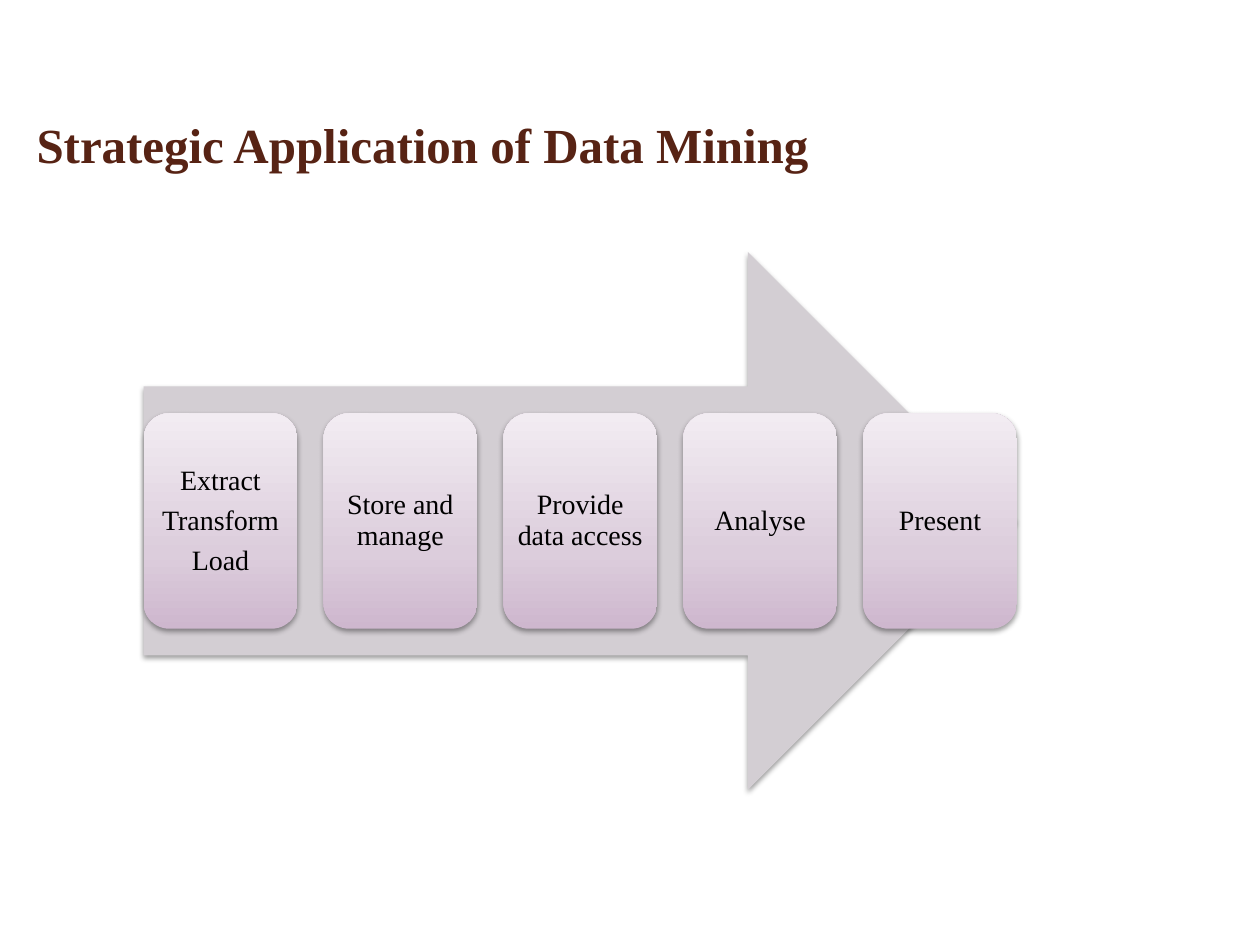
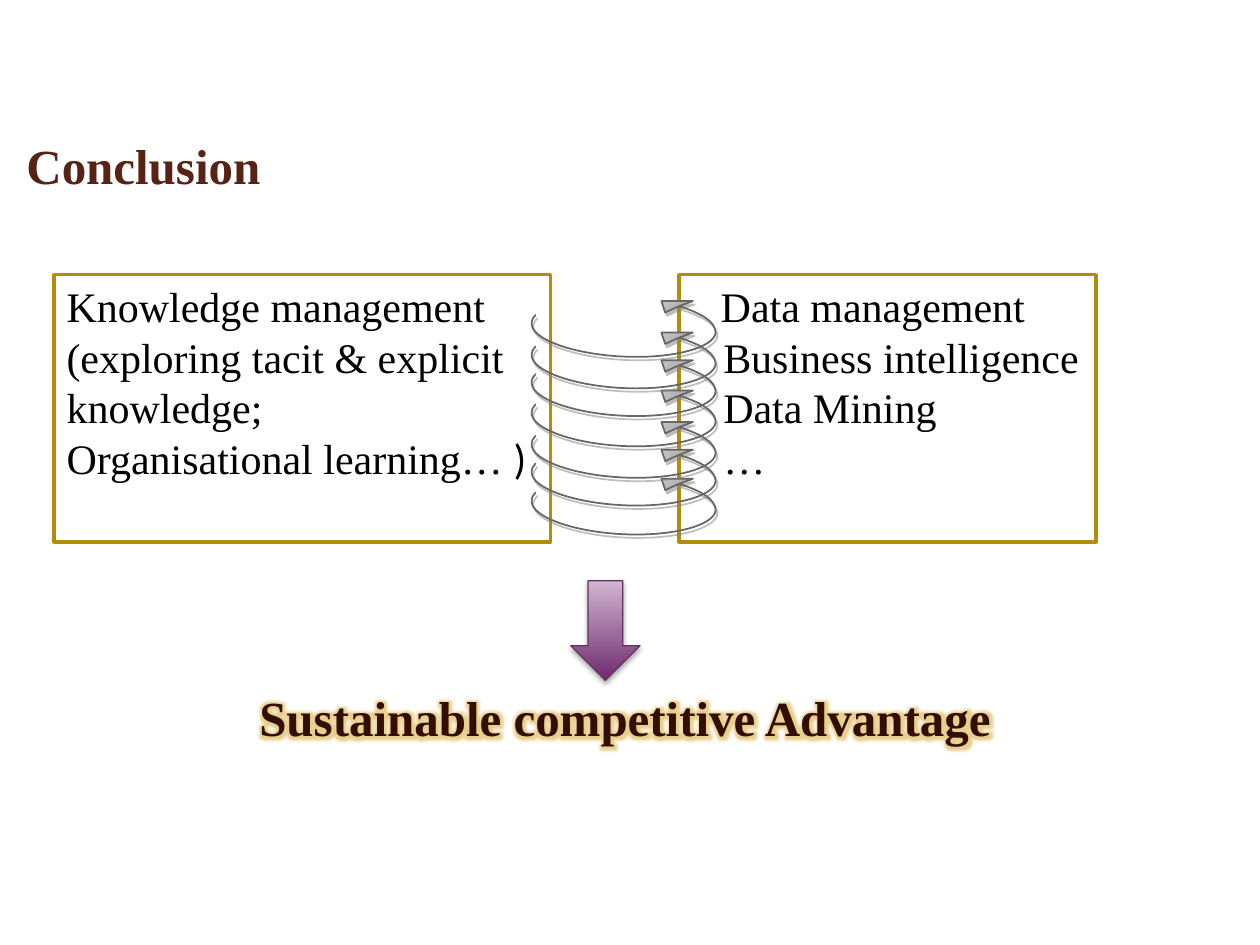
from lxml import etree
from pptx import Presentation
from pptx import util as u
from pptx.dml.color import RGBColor
from pptx.enum import shapes, text
from pptx.oxml import ns

PX = 9144  # 100 px to the inch
FONT = "Times New Roman"
COLORS = {
    "title": "572314", "advantage": "320E04", "glow": "D6A830", "text": "000000",
    "arrow": "D3CED3", "panel": "FFFFFF", "gold": "B58C0A", "plum": "653165",
    "coil": "666666", "shade": "000000", "coil_shade": "7F7F7F",
}
# Gradients: angle in degrees, then (position, colour) stops
STEP_FILL = (270, [(0, "CEB7CE"), (35, "DCCDDC"), (100, "F2ECF2")])
DOWN_FILL = (270, [(0, "6E2B6E"), (100, "D0B5D0")])
COIL_FILL = (45, [(0, "666666"), (50, "CCCCCC"), (100, "666666")])
# Shadows: colour, opacity in %, blur and distance in points, angle in degrees
STEP_SHADOW = ("shade", 38, 3.1, 1.6, 90)
DOWN_SHADOW = ("shade", 35, 3.1, 1.8, 90)
COIL_SHADOW = ("coil_shade", 50, 0, 2.2, 63)


def paint(shape, fill, line=None, width=1, shadow=None):
    """Fill with a colour name or a gradient, then set outline and shadow."""
    shape.shadow.inherit = False
    properties = shape._element.spPr
    if isinstance(fill, str):
        shape.fill.solid()
        shape.fill.fore_color.rgb = RGBColor.from_string(COLORS[fill])
    else:
        angle, stops = fill
        gradient = etree.Element(ns.qn("a:gradFill"), rotWithShape="1")
        stop_list = etree.SubElement(gradient, ns.qn("a:gsLst"))
        for position, color in stops:
            stop = etree.SubElement(stop_list, ns.qn("a:gs"), pos=str(position * 1000))
            etree.SubElement(stop, ns.qn("a:srgbClr"), val=color)
        etree.SubElement(gradient, ns.qn("a:lin"), ang=str(angle * 60000), scaled="0")
        properties.find(ns.qn("a:effectLst")).addprevious(gradient)
    if line:
        shape.line.color.rgb = RGBColor.from_string(COLORS[line])
        shape.line.width = u.Pt(width)
    else:
        shape.line.fill.background()
    if shadow:
        color, opacity, blur, distance, angle = shadow
        outer = etree.SubElement(
            properties.find(ns.qn("a:effectLst")), ns.qn("a:outerShdw"),
            blurRad=str(u.Pt(blur)), dist=str(u.Pt(distance)),
            dir=str(angle * 60000), rotWithShape="0")
        tint = etree.SubElement(outer, ns.qn("a:srgbClr"), val=COLORS[color])
        etree.SubElement(tint, ns.qn("a:alpha"), val=str(opacity * 1000))


def write(shape, lines, size, color="text", bold=False, align=text.PP_ALIGN.LEFT,
          anchor=text.MSO_ANCHOR.TOP, left=10, right=10):
    """Write one paragraph per line; left and right are the side margins in px."""
    frame = shape.text_frame
    frame.word_wrap = True
    frame.vertical_anchor = anchor
    frame.margin_left, frame.margin_right = left * PX, right * PX
    frame.text = "\n".join(lines)
    for para in frame.paragraphs:
        para.alignment = align
        for span in para.runs:
            span.font.name = FONT
            span.font.size = u.Pt(size)
            span.font.bold = bold
            span.font.color.rgb = RGBColor.from_string(COLORS[color])
    return frame


deck = Presentation()
deck.slide_width, deck.slide_height = 1000 * PX, 750 * PX

pages = []
for title, bounds in [("Strategic Application of Data Mining", (16, 75, 791, 79)),
                      ("Conclusion", (8, 68, 768, 126))]:
    page = deck.slides.add_slide(deck.slide_layouts[6])
    box = page.shapes.add_textbox(*[length * PX for length in bounds])
    write(box, [title], 28, "title", bold=True, anchor=text.MSO_ANCHOR.MIDDLE, left=13)
    pages.append(page)
process_page, conclusion_page = pages

# Process steps on a wide arrow
arrow = process_page.shapes.add_shape(
    shapes.MSO_SHAPE.RIGHT_ARROW, 114 * PX, 200 * PX, 693 * PX, 427 * PX)
paint(arrow, "arrow", shadow=STEP_SHADOW)

steps = [["Extract", "Transform", "Load"], ["Store and manage"],
         ["Provide data access"], ["Analyse"], ["Present"]]
step_width = 122
step_pitch = (693 - step_width) / (len(steps) - 1)
for index, lines in enumerate(steps):
    step = process_page.shapes.add_shape(
        shapes.MSO_SHAPE.ROUNDED_RECTANGLE, round((114 + index * step_pitch) * PX),
        328 * PX, step_width * PX, 171 * PX)
    paint(step, STEP_FILL, shadow=STEP_SHADOW)
    frame = write(step, lines, 16, align=text.PP_ALIGN.CENTER,
                  anchor=text.MSO_ANCHOR.MIDDLE, left=1, right=1)
    for para in frame.paragraphs:
        para.line_spacing = 0.9
        para.space_after = u.Pt(5.6)

# Conclusion: down arrow and its result
down_arrow = conclusion_page.shapes.add_shape(
    shapes.MSO_SHAPE.DOWN_ARROW, 453 * PX, 461 * PX, 55 * PX, 79 * PX)
paint(down_arrow, DOWN_FILL, "plum", 0.75, DOWN_SHADOW)

result = conclusion_page.shapes.add_textbox(98 * PX, 541 * PX, 796 * PX, 88 * PX)
frame = write(result, ["Sustainable competitive Advantage"], 28, "advantage",
              bold=True, align=text.PP_ALIGN.CENTER)
effects = etree.Element(ns.qn("a:effectLst"))
glow = etree.SubElement(effects, ns.qn("a:glow"), rad=str(u.Pt(8)))
tint = etree.SubElement(glow, ns.qn("a:srgbClr"), val=COLORS["glow"])
etree.SubElement(tint, ns.qn("a:alpha"), val="55000")
span = frame.paragraphs[0].runs[0]
span._r.rPr.find(ns.qn("a:solidFill")).addnext(effects)

# Two panels
panels = [
    (43, 394, 10, ["Knowledge management (exploring tacit & explicit knowledge;",
                   "Organisational learning… "]),
    (539, 331, 33, ["Data management", "Business intelligence", "Data Mining", "…"]),
]
frames = []
for left, width, margin, lines in panels:
    panel = conclusion_page.shapes.add_shape(
        shapes.MSO_SHAPE.RECTANGLE, left * PX, 218 * PX, width * PX, 212 * PX)
    paint(panel, "panel", "gold", 2)
    frames.append(write(panel, lines, 24, left=margin, right=5))
bracket = frames[0].paragraphs[-1].add_run()
bracket.text = ")"
bracket.font.name = "Calibri"
bracket.font.size = u.Pt(24)
bracket.font.color.rgb = RGBColor.from_string(COLORS["text"])
for para in frames[1].paragraphs[1:]:
    para._p.get_or_add_pPr().set("marL", str(2 * PX))

# Coil of curved arrows linking the panels: four Bezier curves there and back, then a head
arc = [(539, 243), (558, 249), (568, 256), (568, 264), (567, 276), (534, 285), (494, 283),
       (454, 281), (422, 269), (422, 257), (422, 254), (423, 252), (425, 250)]
head = [(550, 239), (525, 239), (528, 248)]
outline = arc + arc[-2::-1] + head
curve_points = 2 * (len(arc) - 1)

for drop in (141, 71, 25, 118, 47, 96, 0):
    points = [(x * PX, (y + drop) * PX) for x, y in outline]
    builder = conclusion_page.shapes.build_freeform(*points[0], scale=1.0)
    builder.add_line_segments(points[1:], close=True)
    coil = builder.convert_to_shape()
    segments = list(coil._element.iter(ns.qn("a:lnTo")))[:curve_points]
    for first in range(0, curve_points, 3):
        curve = etree.Element(ns.qn("a:cubicBezTo"))
        segments[first].addprevious(curve)
        for segment in segments[first:first + 3]:
            curve.append(segment[0])
            segment.getparent().remove(segment)
    paint(coil, COIL_FILL, "coil", 1, COIL_SHADOW)

deck.save("out.pptx")
